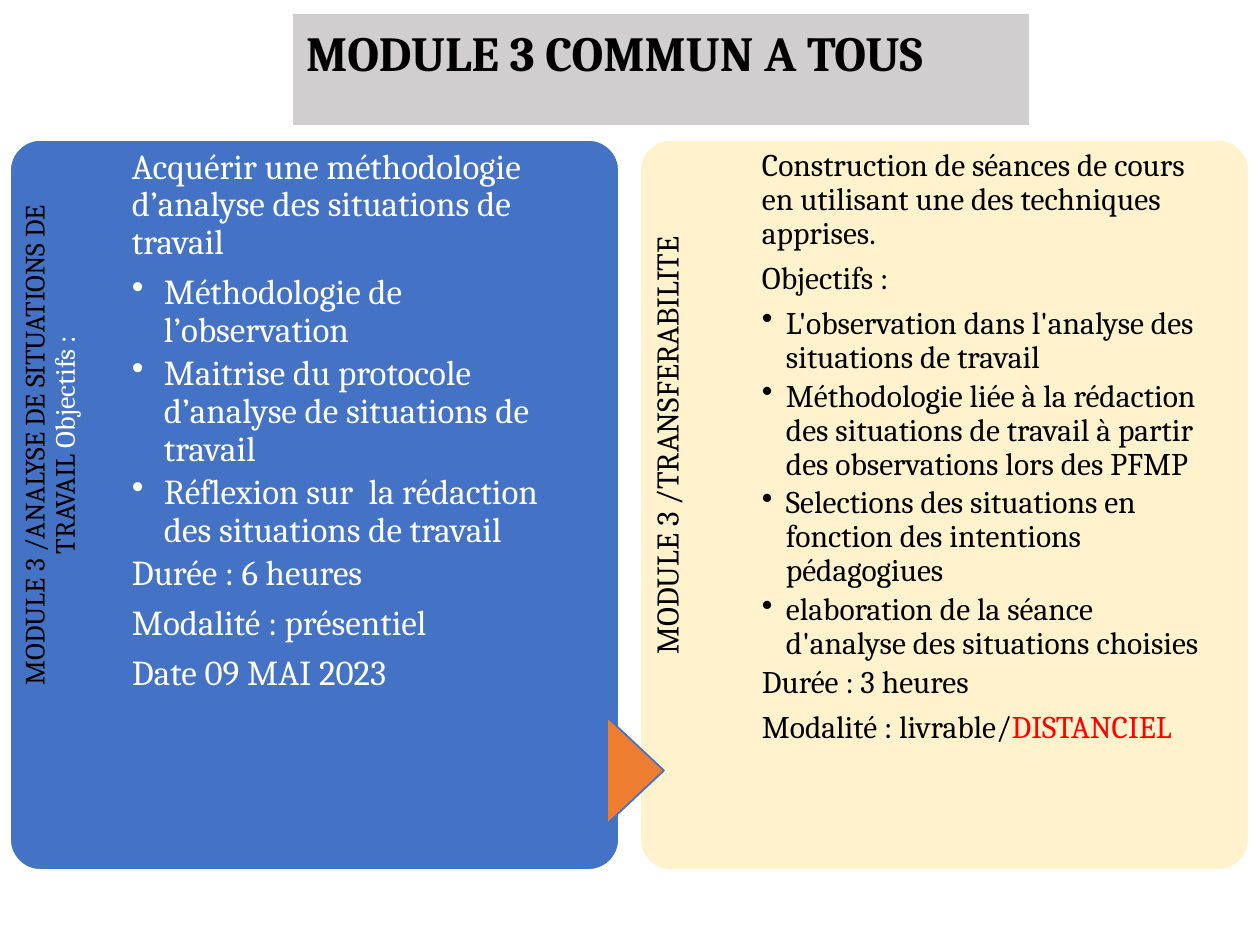
import pptx
import pptx.util
import pptx.dml.color
import pptx.enum.shapes
import pptx.enum.text
import pptx.oxml.ns
import lxml.etree

Kind = pptx.enum.shapes.MSO_SHAPE
Align = pptx.enum.text.PP_ALIGN
Anchor = pptx.enum.text.MSO_ANCHOR
SCALE = 914400 / 126


def px(*nums):
    return [pptx.util.Emu(round(n * SCALE)) for n in nums]


def paint(part, tone):
    if hasattr(part, "solid"):
        part.solid()
        part.fore_color.rgb = pptx.dml.color.RGBColor.from_string(tone)
    else:
        part.color.rgb = pptx.dml.color.RGBColor.from_string(tone)


cards = [
    {
        "fill": "4472C4", "ink": "FFFFFF", "size": 20, "dent": 32,
        "label": [("MODULE 3 /ANALYSE DE SITUATIONS DE TRAVAIL ", "000000"),
                  ("Objectifs :", "FFFFFF")],
        "small": 16, "pad": (8, 10),
        "lines": [
            "Acquérir une méthodologie d’analyse des situations de travail",
            "•Méthodologie de l’observation",
            "•Maitrise du protocole d’analyse de situations de travail",
            "•Réflexion sur  la rédaction des situations de travail",
            "Durée : 6 heures",
            "Modalité : présentiel",
            "Date 09 MAI 2023",
        ],
        "tail": "",
    },
    {
        "fill": "FFF2CC", "ink": "000000", "size": 18, "dent": 24,
        "label": [("MODULE 3 /TRANSFERABILITE", "000000")],
        "small": 18, "pad": (9, 11),
        "lines": [
            "Construction de séances de cours en utilisant une des techniques apprises.",
            "Objectifs :",
            "•L'observation dans l'analyse des situations de travail",
            "•Méthodologie liée à la rédaction des situations de travail à partir des observations lors des PFMP",
            "•Selections des situations en fonction des intentions pédagogiues",
            "•elaboration de la séance d'analyse des situations choisies",
            "Durée : 3 heures",
            "Modalité : livrable/",
        ],
        "tail": "DISTANCIEL",
    },
]

deck = pptx.Presentation()
deck.slide_width, deck.slide_height = px(1260, 945)
slide = deck.slides.add_slide(deck.slide_layouts[5])
shapes = slide.shapes

title = shapes.title
title.left, title.top, title.width, title.height = px(293, 14, 736, 111)
paint(title.fill, "D0CECE")
frame = title.text_frame
frame.text = "MODULE 3 COMMUN A TOUS"
frame.word_wrap = False
frame.vertical_anchor = Anchor.TOP
frame.margin_left, frame.margin_top = px(13, 9)
para = frame.paragraphs[0]
para.alignment = Align.LEFT
font = para.runs[0].font
font.name, font.size, font.bold = "Cambria", pptx.util.Pt(28), True
paint(font, "000000")

for col, card in enumerate(cards):
    left = 630 * col
    panel = shapes.add_shape(Kind.ROUNDED_RECTANGLE, *px(left + 10, 140, 609, 730))
    panel.adjustments[0] = 0.05
    panel.shadow.inherit = False
    paint(panel.fill, card["fill"])
    paint(panel.line, "FFFFFF")
    panel.line.width = pptx.util.Pt(1)

    label = shapes.add_textbox(*px(left - 226, 381, 595, 118))
    label.rotation = 270
    frame = label.text_frame
    frame.word_wrap = True
    frame.margin_left = frame.margin_bottom = 0
    frame.margin_top, frame.margin_right = px(*card["pad"])
    para = frame.paragraphs[0]
    para.alignment = Align.CENTER
    para.line_spacing = 0.9
    for text, tone in card["label"]:
        run = para.add_run()
        run.text = text
        run.font.name, run.font.size = "Cambria", pptx.util.Pt(card["small"])
        paint(run.font, tone)

    body = shapes.add_textbox(*px(left + 132, 140, 454, 730))
    frame = body.text_frame
    frame.word_wrap = True
    frame.margin_left = frame.margin_right = frame.margin_bottom = 0
    frame.margin_top = px(9)[0]
    frame.text = "\n".join(line.lstrip("•") for line in card["lines"])
    if card["tail"]:
        frame.paragraphs[-1].add_run().text = card["tail"]
    for line, para in zip(card["lines"], frame.paragraphs):
        listed = line.startswith("•")
        para.line_spacing = 0.9
        para.space_after = pptx.util.Pt(card["size"] * (0.15 if listed else 0.35))
        if listed:
            para.level = 1
            dent = px(card["dent"])[0]
            props = para._p.get_or_add_pPr()
            props.set("marL", str(dent))
            props.set("indent", str(-dent))
            dot = lxml.etree.SubElement(props, pptx.oxml.ns.qn("a:buChar"))
            dot.set("char", "•")
        for run in para.runs:
            run.font.name, run.font.size = "Cambria", pptx.util.Pt(card["size"])
            paint(run.font, card["ink"])
    if card["tail"]:
        paint(frame.paragraphs[-1].runs[-1].font, "FF0000")

arrow = shapes.add_shape(Kind.FLOWCHART_EXTRACT, *px(582, 742, 107, 57))
arrow.rotation = 90
arrow.shadow.inherit = False
paint(arrow.fill, "ED7D31")
paint(arrow.line, "4472C4")
arrow.line.width = pptx.util.Pt(1)

deck.save("out.pptx")
